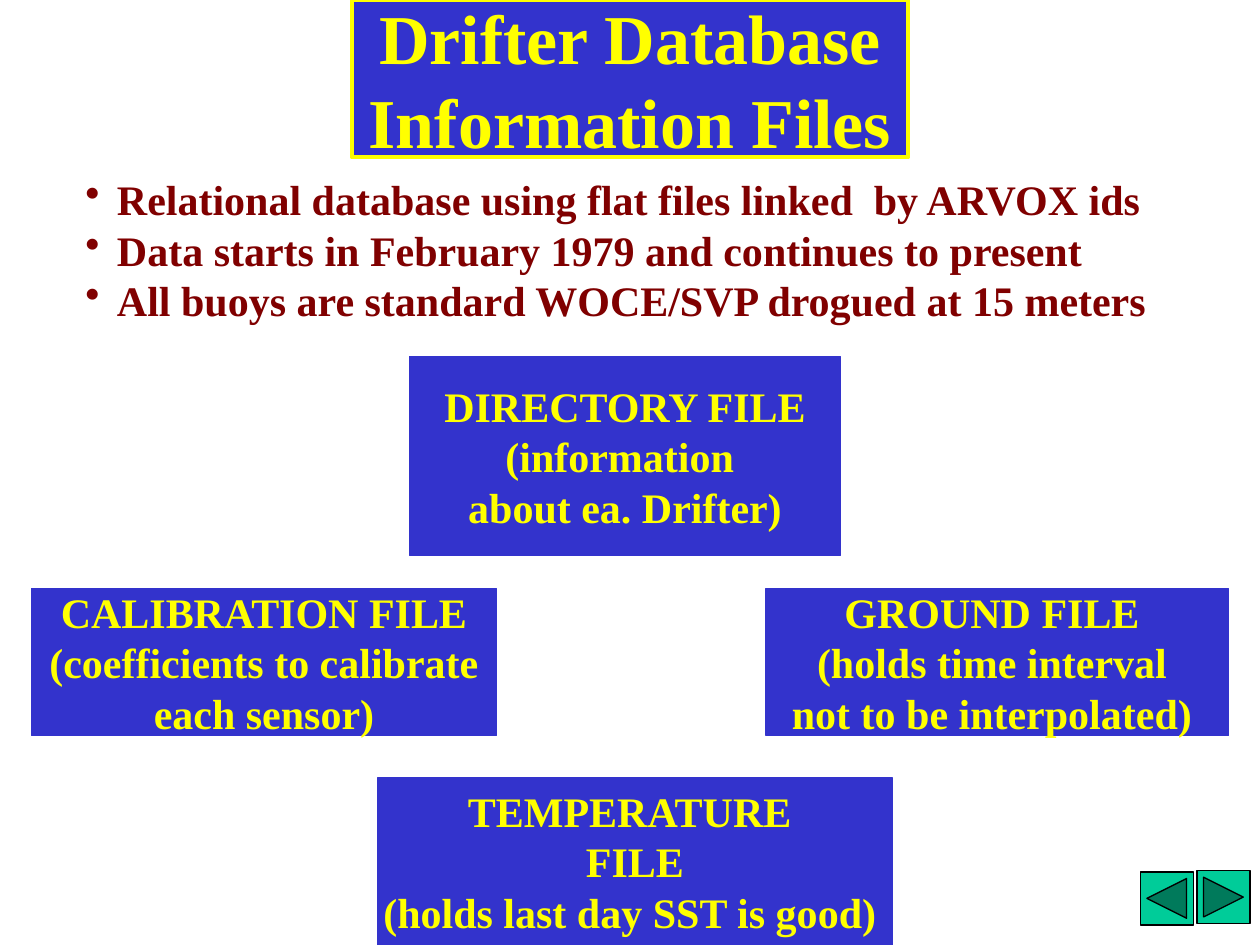
from lxml.etree import SubElement
from pptx import Presentation
from pptx.dml.color import RGBColor
from pptx.enum.shapes import MSO_SHAPE
from pptx.enum.text import MSO_ANCHOR, PP_ALIGN
from pptx.oxml.ns import qn
from pptx.util import Inches, Pt

BLUE = RGBColor(0x33, 0x33, 0xCC)
YELLOW = RGBColor(0xFF, 0xFF, 0x00)
MAROON = RGBColor(0x80, 0x00, 0x00)
GREEN = RGBColor(0x00, 0xCC, 0x99)
BLACK = RGBColor(0x00, 0x00, 0x00)

prs = Presentation()
prs.slide_width, prs.slide_height = Inches(10), Inches(7.5)
slide = prs.slides.add_slide(prs.slide_layouts[6])


def add_box(kind, bounds, fill, line, line_width=0.75):
    box = slide.shapes.add_shape(kind, *map(Inches, bounds))
    box.shadow.inherit = False
    box.fill.solid()
    box.fill.fore_color.rgb = fill
    box.line.color.rgb = line
    box.line.width = Pt(line_width)
    return box


def write_text(frame, text, size, color, align):
    """Fill the frame; a newline starts a paragraph, a vertical tab breaks a line."""
    frame.text = text
    for paragraph in frame.paragraphs:
        paragraph.alignment = align
        for run in paragraph.runs:
            font_format = {"name": "Times New Roman", "size": Pt(size), "bold": True}
            for attribute, value in font_format.items():
                setattr(run.font, attribute, value)
            run.font.color.rgb = color


# Navigation buttons
for button, bounds in (
    (MSO_SHAPE.ACTION_BUTTON_FORWARD_OR_NEXT, (9.5, 6.91, 0.42, 0.42)),
    (MSO_SHAPE.ACTION_BUTTON_BACK_OR_PREVIOUS, (9.05, 6.92, 0.42, 0.42)),
):
    add_box(button, bounds, GREEN, BLACK)

# Title
title = add_box(MSO_SHAPE.RECTANGLE, (2.79, 0, 4.42, 1.25), BLUE, YELLOW, 2.25)
title.text_frame.vertical_anchor = MSO_ANCHOR.MIDDLE
write_text(title.text_frame, "Drifter Database\vInformation Files", 40, YELLOW, PP_ALIGN.CENTER)

# Database facts
facts = slide.shapes.add_textbox(Inches(0.33), Inches(1.33), Inches(9.25), Inches(1.3))
facts.text_frame.word_wrap = True
write_text(
    facts.text_frame,
    "Relational database using flat files linked  by ARVOX ids\n"
    "Data starts in February 1979 and continues to present\n"
    "All buoys are standard WOCE/SVP drogued at 15 meters",
    24, MAROON, PP_ALIGN.LEFT,
)
for fact in facts.text_frame.paragraphs:
    properties = fact._p.get_or_add_pPr()
    properties.set("marL", str(Inches(0.5)))
    properties.set("indent", str(Inches(-0.25)))
    SubElement(properties, qn("a:buChar"), char="•")

# Database files
files = (
    ((3.25, 2.83, 3.42, 1.58), "DIRECTORY FILE\n(information \nabout ea. Drifter)"),
    ((0.25, 4.67, 3.69, 1.17), "CALIBRATION FILE\n(coefficients to calibrate\neach sensor)"),
    ((3, 6.17, 4.08, 1.33), "TEMPERATURE \nFILE\n(holds last day SST is good) "),
    ((6.08, 4.67, 3.67, 1.17), "GROUND FILE \n(holds time interval \nnot to be interpolated) "),
)
for bounds, description in files:
    file_box = add_box(MSO_SHAPE.RECTANGLE, bounds, BLUE, BLUE)
    file_box.text_frame.word_wrap = False
    file_box.text_frame.vertical_anchor = MSO_ANCHOR.MIDDLE
    write_text(file_box.text_frame, description, 24, YELLOW, PP_ALIGN.CENTER)

prs.save("out.pptx")
